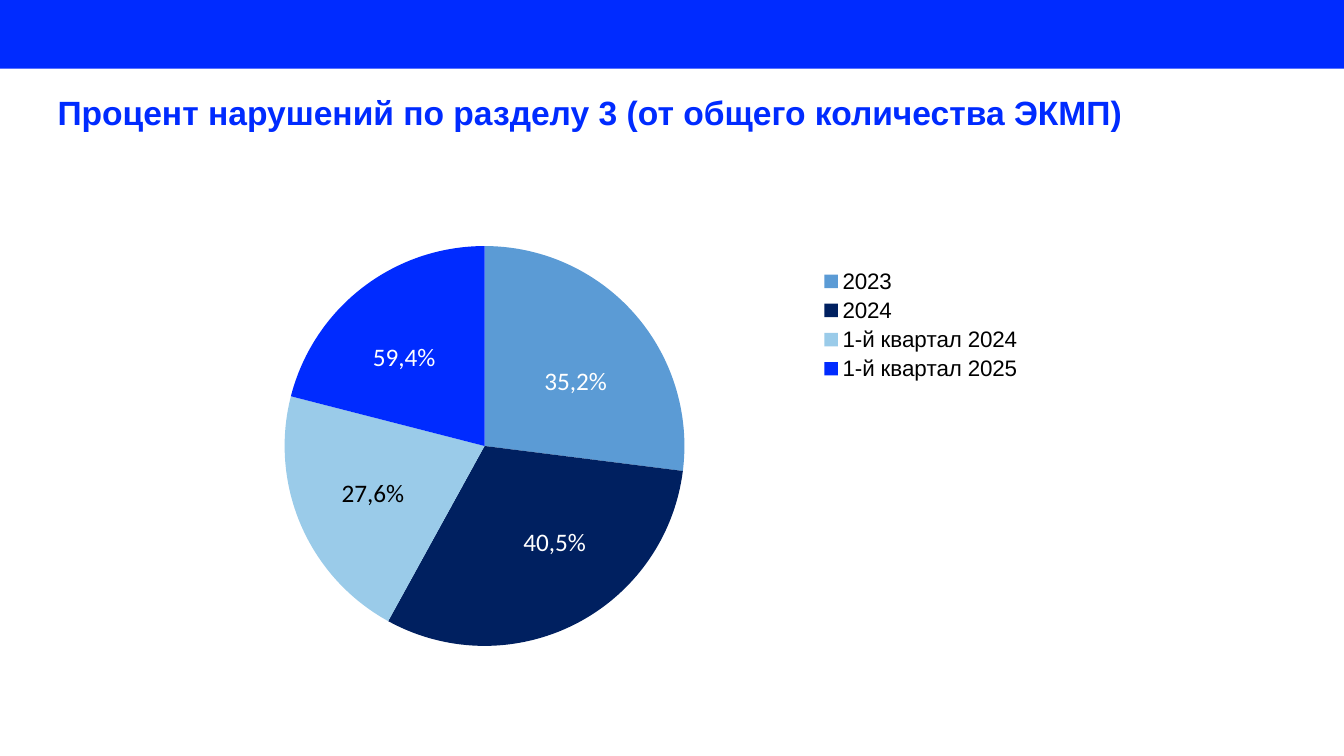
import pptx
import pptx.chart.data
import pptx.dml.color
import pptx.enum.chart
import pptx.enum.shapes
import pptx.enum.text
import pptx.oxml
import pptx.oxml.ns
import pptx.util

Cm = pptx.util.Cm
Pt = pptx.util.Pt

COLORS = {
    "blue": "002BFF",
    "steel": "5B9BD5",
    "navy": "002060",
    "sky": "9ACBE9",
    "white": "FFFFFF",
    "black": "000000",
}
INSET = Cm(0.13)

PERIODS = [
    ("2023", 27, "steel"),
    ("2024", 31, "navy"),
    ("1-й квартал 2024", 21, "sky"),
    ("1-й квартал 2025", 21, "blue"),
]
PERCENT_LABELS = [
    ("40,5%", 13.06, 13.13, "white"),
    ("59,4%", 9.27, 8.48, "white"),
    ("27,6%", 8.48, 11.89, "black"),
    ("35,2%", 13.59, 9.07, "white"),
]


def color(name):
    return pptx.dml.color.RGBColor.from_string(COLORS[name])


def style_font(font, name, size, color_name, bold=False):
    font.name = name
    font.size = Pt(size)
    font.bold = bold
    font.color.rgb = color(color_name)


def fill_frame(frame, text, font_name, size, color_name, bold=False):
    frame.margin_left = frame.margin_right = INSET
    frame.margin_top = frame.margin_bottom = INSET
    frame.vertical_anchor = pptx.enum.text.MSO_ANCHOR.TOP
    para = frame.paragraphs[0]
    para.alignment = pptx.enum.text.PP_ALIGN.LEFT
    span = para.add_run()
    span.text = text
    style_font(span.font, font_name, size, color_name, bold)
    return para


def add_header_bar(page, width):
    bar = page.shapes.add_shape(
        pptx.enum.shapes.MSO_SHAPE.RECTANGLE, 0, 0, width, Cm(1.73)
    )
    bar.shadow.inherit = False
    bar.fill.solid()
    bar.fill.fore_color.rgb = color("blue")
    bar.line.fill.background()


def set_title(page, text):
    title = page.shapes.title
    title.left, title.top = Cm(1.32), Cm(2.29)
    title.width, title.height = Cm(31.24), Cm(1.27)
    frame = title.text_frame
    frame.word_wrap = True
    frame.auto_size = pptx.enum.text.MSO_AUTO_SIZE.NONE
    para = fill_frame(frame, text, "Arial", 24, "blue", bold=True)
    para.line_spacing = 0.9


def manual_layout(x, y, width, height, inner=False):
    target = '<c:layoutTarget val="inner"/>' if inner else ""
    return pptx.oxml.parse_xml(
        f"<c:layout {pptx.oxml.ns.nsdecls('c')}><c:manualLayout>{target}"
        '<c:xMode val="edge"/><c:yMode val="edge"/>'
        f'<c:x val="{x}"/><c:y val="{y}"/>'
        f'<c:w val="{width}"/><c:h val="{height}"/>'
        "</c:manualLayout></c:layout>"
    )


def place_plot(chart, layout):
    plot_area = chart.plots[0]._element.getparent()
    for existing in plot_area.findall(pptx.oxml.ns.qn("c:layout")):
        plot_area.remove(existing)
    plot_area.insert(0, layout)


def place_legend(legend, layout):
    element = legend._element
    for existing in element.findall(pptx.oxml.ns.qn("c:layout")):
        element.remove(existing)
    element.find(pptx.oxml.ns.qn("c:legendPos")).addnext(layout)


def add_pie(page):
    data = pptx.chart.data.CategoryChartData()
    data.categories = [period for period, _, _ in PERIODS]
    data.add_series("Series 1", [value for _, value, _ in PERIODS])
    chart = page.shapes.add_chart(
        pptx.enum.chart.XL_CHART_TYPE.PIE,
        Cm(7.01), Cm(6.15), Cm(19.63), Cm(10.21), data,
    ).chart
    chart.has_title = False
    style_font(chart.font, "Arial", 10, "black")
    plot = chart.plots[0]
    plot.vary_by_categories = True
    for index, (_, _, color_name) in enumerate(PERIODS):
        point = plot.series[0].points[index]
        point.format.fill.solid()
        point.format.fill.fore_color.rgb = color(color_name)
        point.format.line.fill.background()
    chart.has_legend = True
    legend = chart.legend
    legend.position = pptx.enum.chart.XL_LEGEND_POSITION.RIGHT
    legend.include_in_layout = True
    style_font(legend.font, "Arial", 16, "black")
    place_plot(chart, manual_layout(0.005, 0.005, 0.52, 0.987, inner=True))
    place_legend(legend, manual_layout(0.69, 0.05, 0.27, 0.3))


def add_percent_label(page, text, left, top, color_name):
    box = page.shapes.add_textbox(Cm(left), Cm(top), Cm(1.88), Cm(0.91))
    box.text_frame.word_wrap = False
    fill_frame(box.text_frame, text, "Calibri", 18, color_name)


def main():
    deck = pptx.Presentation()
    deck.slide_width, deck.slide_height = Cm(33.87), Cm(19.05)
    page = deck.slides.add_slide(deck.slide_layouts.get_by_name("Title Only"))
    add_header_bar(page, deck.slide_width)
    set_title(page, "Процент нарушений по разделу 3 (от общего количества ЭКМП)")
    add_pie(page)
    for label in PERCENT_LABELS:
        add_percent_label(page, *label)
    deck.save("out.pptx")


if __name__ == "__main__":
    main()
